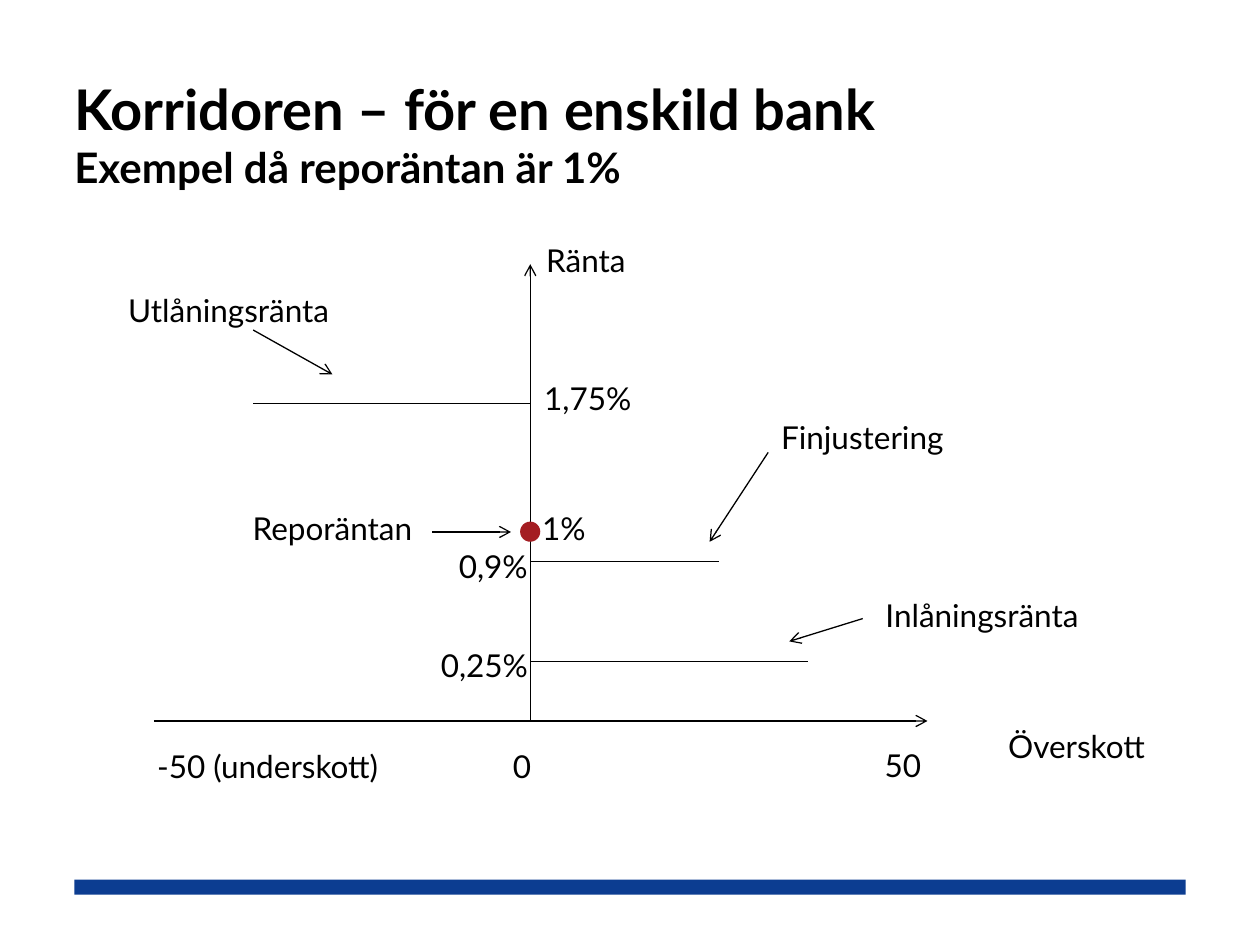
from lxml import etree
from pptx import Presentation
from pptx.dml.color import RGBColor
from pptx.enum.shapes import MSO_CONNECTOR, MSO_SHAPE
from pptx.enum.text import MSO_ANCHOR, PP_ALIGN
from pptx.oxml.ns import qn
from pptx.util import Pt

LINE = MSO_CONNECTOR.STRAIGHT
RECT, OVAL = MSO_SHAPE.RECTANGLE, MSO_SHAPE.OVAL
BOTTOM, TOP = MSO_ANCHOR.BOTTOM, MSO_ANCHOR.TOP
LEFT, CENTER = PP_ALIGN.LEFT, PP_ALIGN.CENTER
AXIS, BASE = 303, 412


def color(code):
    return RGBColor.from_string(code)


class Pen:
    """Draws styled elements on the current slide."""

    ink = "000000"
    font = {"name": "Lato", "size": Pt(18), "bold": False}

    def __init__(self, slide):
        self.slide = slide
        self.shapes = slide.shapes

    def text(self, par, words, **extra):
        run = par.add_run()
        run.text = words
        for key, value in {**self.font, **extra}.items():
            setattr(run.font, key, value)
        run.font.color.rgb = color(self.ink)

    def box(self, left, top, width, height, anchor, align):
        frame = self.shapes.add_textbox(
            Pt(left), Pt(top), Pt(width), Pt(height)).text_frame
        frame.word_wrap = True
        frame.vertical_anchor = anchor
        frame.paragraphs[0].alignment = align
        return frame

    def title(self, head, sub):
        frame = self.box(42.5, 19.5, 587, 90, BOTTOM, LEFT)
        for side in ("left", "top", "right", "bottom"):
            setattr(frame, f"margin_{side}", 0)
        par = frame.paragraphs[0]
        self.text(par, head, size=Pt(32), bold=True)
        par.add_line_break()
        self.text(par, sub, size=Pt(24), bold=True)

    def label(self, words, mid, top, width):
        frame = self.box(mid - width / 2, top, width, 29, TOP, CENTER)
        self.text(frame.paragraphs[0], words)

    def line(self, start, end, arrow=False):
        link = self.shapes.add_connector(LINE, *map(Pt, start + end))
        link.line.width = Pt(0.75)
        link.line.color.rgb = color(self.ink)
        props = link._element.spPr
        if arrow:
            etree.SubElement(props.find(qn("a:ln")), qn("a:tailEnd"), type="arrow")
        etree.SubElement(props, qn("a:effectLst"))

    def shape(self, kind, left, top, width, height, fill):
        shape = self.shapes.add_shape(kind, Pt(left), Pt(top), Pt(width), Pt(height))
        shape.shadow.inherit = False
        shape.fill.solid()
        shape.fill.fore_color.rgb = color(fill)
        shape.line.fill.background()


def main():
    deck = Presentation()
    deck.slide_width, deck.slide_height = Pt(720), Pt(540)
    pen = Pen(deck.slides.add_slide(deck.slide_layouts[6]))

    pen.shape(RECT, 42.5, 502.6, 635, 8.6, "0C3D91")
    pen.title("Korridoren – för en enskild bank", "Exempel då reporäntan är 1%")

    rates = [(378, AXIS, 462), (230.4, 144.7, AXIS), (321, AXIS, 411)]
    for y, left, right in rates:
        pen.line((left, y), (right, y))

    arrows = [
        ((AXIS, BASE), (AXIS, 151)),
        ((88, BASE), (530, BASE)),
        ((439, 258.5), (405.5, 309.6)),
        ((144.7, 188.6), (190, 214)),
        ((493, 353.5), (451, 366.5)),
        ((247, 304), (292, 304)),
    ]
    for start, end in arrows:
        pen.line(start, end, arrow=True)

    pen.shape(OVAL, AXIS - 5.75, 298.1, 11.5, 11.5, "A41D22")

    labels = [
        ("Ränta", 334.8, 134, 176),
        ("Överskott", 615.2, 412, 136),
        ("Finjustering", 492.8, 235.5, 210),
        ("Utlåningsränta", 130.7, 162.8, 153),
        ("Inlåningsränta", 561.2, 337, 153),
        ("Reporäntan", 190, 287.2, 158),
        ("-50 (underskott)", 153, 423.5, 153),
        ("0 ", 300.6, 423.5, 153),
        ("50", 515.9, 422.5, 153),
        ("1%", 322.2, 287.2, 150),
        ("0,25%", 276.8, 365.8, 150),
        ("1,75%", 335.9, 213, 150),
        ("0,9%", 281.9, 309, 150),
    ]
    for item in labels:
        pen.label(*item)

    deck.save("out.pptx")


if __name__ == "__main__":
    main()
